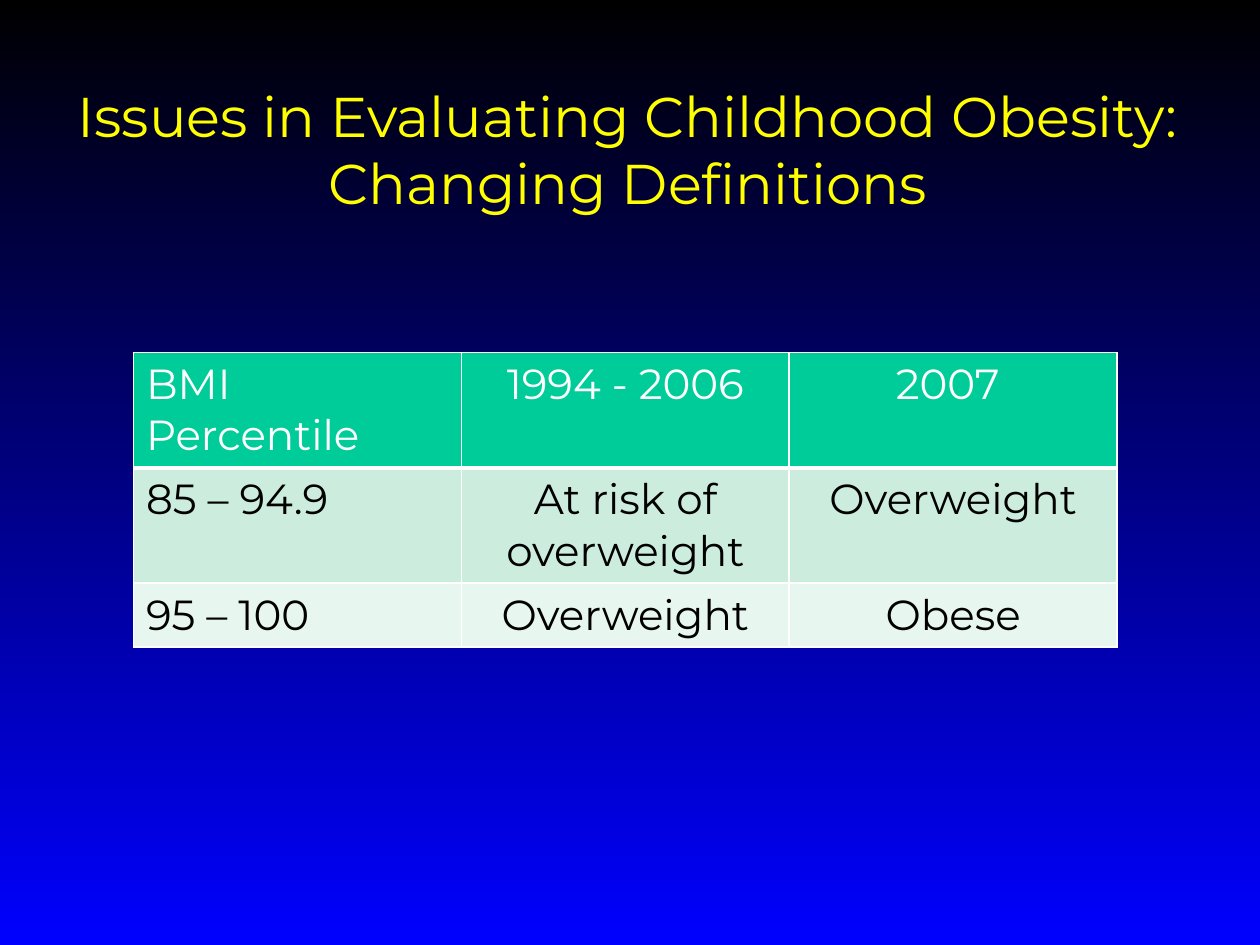
from dataclasses import dataclass

from lxml.etree import SubElement
from pptx import Presentation
from pptx.dml.color import RGBColor
from pptx.enum.text import MSO_ANCHOR, MSO_AUTO_SIZE, PP_ALIGN
from pptx.oxml.ns import qn
from pptx.util import Cm, Pt

FONT = "Montserrat"
BLACK = RGBColor(0x00, 0x00, 0x00)
BLUE = RGBColor(0x00, 0x00, 0xFF)
YELLOW = RGBColor(0xFF, 0xFF, 0x00)
WHITE = RGBColor(0xFF, 0xFF, 0xFF)
GREEN = RGBColor(0x00, 0xCC, 0x99)
LIGHT_GREEN = RGBColor(0xCC, 0xEC, 0xDE)
PALE_GREEN = RGBColor(0xE7, 0xF6, 0xEF)

COLUMN_WIDTH = Cm(6.61)


@dataclass(frozen=True)
class TableRow:
    texts: tuple[str, str, str]
    height: Cm
    fill: RGBColor
    text_color: RGBColor = BLACK
    bottom_border: Pt = Pt(1)


ROWS = [
    TableRow(("BMI Percentile", "1994 - 2006", "2007 "), Cm(2.31), GREEN, WHITE, Pt(3)),
    TableRow(("85 – 94.9", "At risk of overweight", "Overweight"), Cm(2.31), LIGHT_GREEN),
    TableRow(("95 – 100", "Overweight", "Obese"), Cm(1.28), PALE_GREEN),
]


def add_text(paragraph, text: str, size: Pt, color: RGBColor, alignment: PP_ALIGN) -> None:
    paragraph.alignment = alignment
    run = paragraph.add_run()
    run.text = text
    run.font.name = FONT
    run.font.size = size
    run.font.bold = False
    run.font.color.rgb = color


def set_borders(cell, widths: dict[str, Pt]) -> None:
    """Add white borders; they must come before the fill in the cell properties."""
    properties = cell._tc.get_or_add_tcPr()
    for tag, width in widths.items():
        line = SubElement(properties, qn(tag), w=str(int(width)))
        fill = SubElement(line, qn("a:solidFill"))
        SubElement(fill, qn("a:srgbClr"), val=str(WHITE))


def add_definitions_table(slide) -> None:
    column_count = len(ROWS[0].texts)
    table = slide.shapes.add_table(
        len(ROWS), column_count, Cm(2.69), Cm(7.11),
        COLUMN_WIDTH * column_count, sum(row.height for row in ROWS),
    ).table
    table.first_row = False
    table.horz_banding = False
    for column in table.columns:
        column.width = COLUMN_WIDTH

    top_border = Pt(1)
    for row_index, row in enumerate(ROWS):
        table.rows[row_index].height = row.height
        for column_index, text in enumerate(row.texts):
            cell = table.cell(row_index, column_index)
            set_borders(cell, {"a:lnL": Pt(1), "a:lnR": Pt(1),
                               "a:lnT": top_border, "a:lnB": row.bottom_border})
            cell.fill.solid()
            cell.fill.fore_color.rgb = row.fill
            alignment = PP_ALIGN.CENTER if column_index else PP_ALIGN.LEFT
            add_text(cell.text_frame.paragraphs[0], text, Pt(24), row.text_color, alignment)
        top_border = row.bottom_border


def set_background(slide) -> None:
    fill = slide.background.fill
    fill.gradient()
    fill.gradient_angle = 270  # counter-clockwise: top to bottom
    for stop, color, position in zip(fill.gradient_stops, (BLACK, BLUE), (0, 1)):
        stop.color.rgb = color
        stop.position = position


def set_title(slide, text: str) -> None:
    title = slide.shapes.title
    title.left, title.top, title.width, title.height = Cm(0.99), Cm(1.52), Cm(23.34), Cm(3)
    frame = title.text_frame
    frame.word_wrap = True
    frame.auto_size = MSO_AUTO_SIZE.NONE
    frame.vertical_anchor = MSO_ANCHOR.TOP
    add_text(frame.paragraphs[0], text, Pt(32), YELLOW, PP_ALIGN.CENTER)


def main() -> None:
    presentation = Presentation()
    presentation.slide_width, presentation.slide_height = Cm(25.4), Cm(19.05)
    slide = presentation.slides.add_slide(presentation.slide_layouts[5])  # title only
    set_background(slide)
    set_title(slide, "Issues in Evaluating Childhood Obesity: Changing Definitions")
    add_definitions_table(slide)
    presentation.save("out.pptx")


if __name__ == "__main__":
    main()
